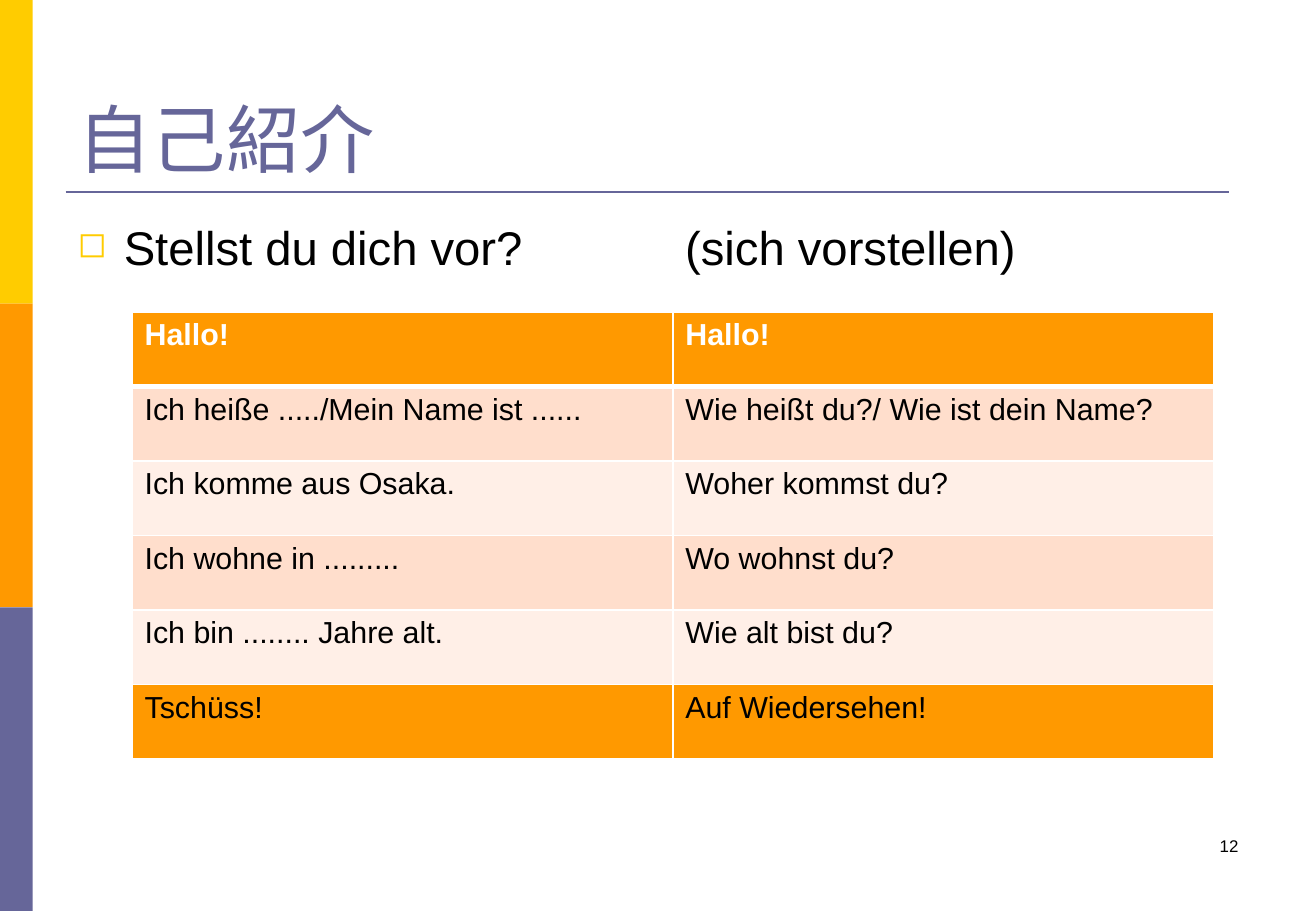
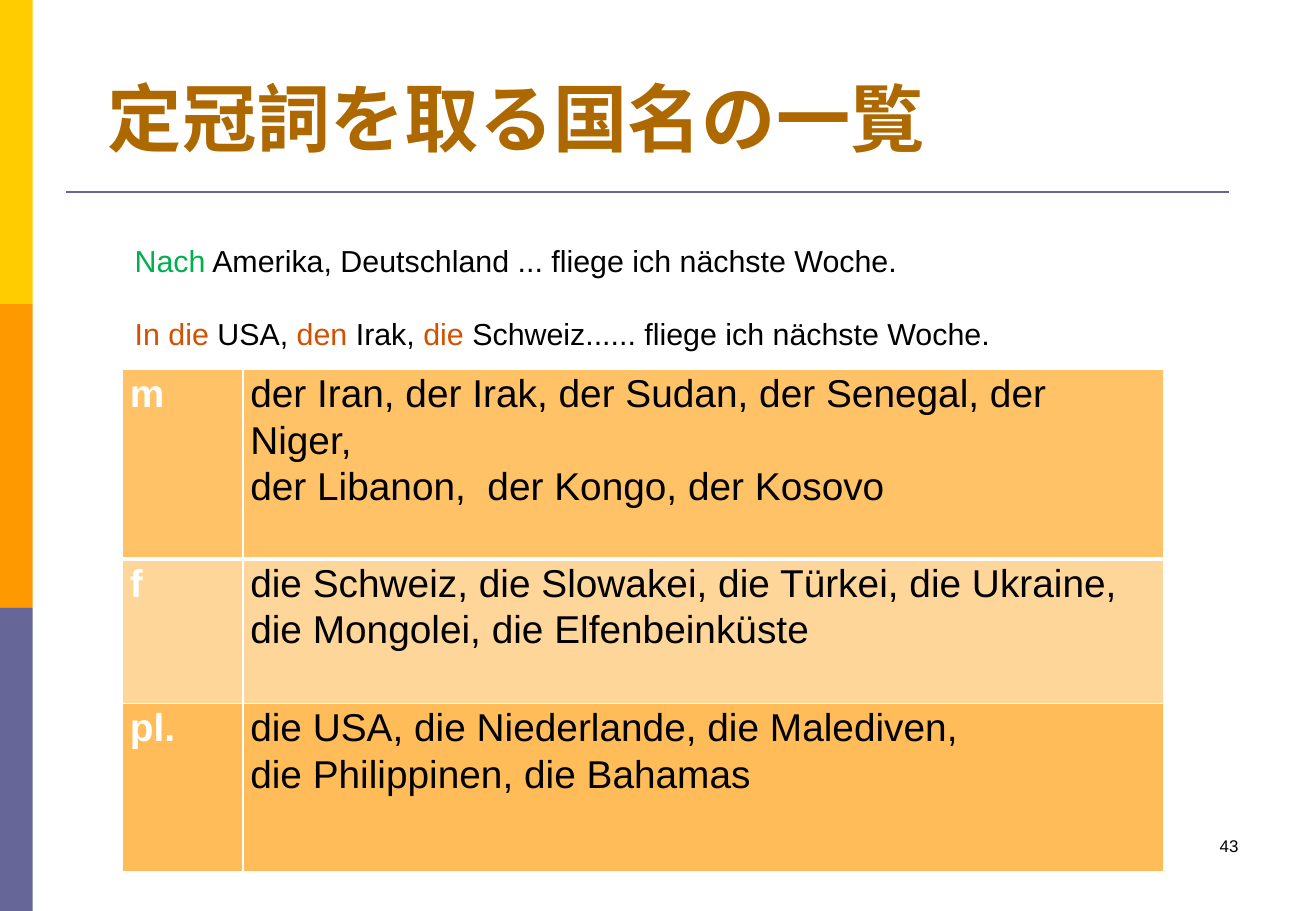
from collections import namedtuple
from dataclasses import dataclass

from lxml.etree import SubElement
from pptx import Presentation
from pptx.dml.color import RGBColor
from pptx.enum.shapes import MSO_CONNECTOR as Connector, MSO_SHAPE as Shape
from pptx.enum.text import MSO_ANCHOR as Anchor, PP_ALIGN as Align
from pptx.oxml.ns import qn
from pptx.util import Inches, Pt

Box = namedtuple("Box", "left top width height")


@dataclass(frozen=True)
class Theme:
    yellow: str = "FFCC00"
    orange: str = "FF9900"
    violet: str = "666699"
    brown: str = "AD6800"
    green: str = "00B050"
    rust: str = "D45000"
    black: str = "000000"
    white: str = "FFFFFF"
    peach: str = "FFDECC"
    pale_peach: str = "FFEFE7"
    masculine: str = "FFC266"
    feminine: str = "FFD699"
    plural: str = "FFBC58"
    font: str = "Arial"
    title_font: str = "Times New Roman"
    asian_font: str = "Noto Sans CJK JP"
    title_size: float = 44
    body_size: float = 28
    list_size: float = 23
    text_size: float = 18
    number_size: float = 10


THEME = Theme()
SLIDE = Box(0, 0, 10.83, 7.5)


def place(box):
    return [Inches(length) for length in box]


def style(run, size, color=THEME.black, bold=False, name=THEME.font):
    font = run.font
    font.size, font.bold, font.name = Pt(size), bold, name
    font.color.rgb = RGBColor.from_string(color)


def add_text(slide, box, text, size, **look):
    """Add a one-paragraph text box and return its text frame."""
    frame = slide.shapes.add_textbox(*place(box)).text_frame
    frame.word_wrap = True
    frame.text = text
    style(frame.paragraphs[0].runs[0], size, **look)
    return frame


def add_side_bands(slide, box, colors):
    height = box.height / len(colors)
    for index, color in enumerate(colors):
        part = Box(box.left, box.top + index * height, box.width, height)
        band = slide.shapes.add_shape(Shape.RECTANGLE, *place(part))
        band.shadow.inherit = False
        band.fill.solid()
        band.fill.fore_color.rgb = RGBColor.from_string(color)
        band.line.fill.background()


def add_title_rule(slide, left, right, top):
    rule = slide.shapes.add_connector(
        Connector.STRAIGHT, Inches(left), Inches(top), Inches(right), Inches(top))
    rule.line.color.rgb = RGBColor.from_string(THEME.violet)
    rule.line.width = Pt(1.5)
    SubElement(rule._element.spPr, qn("a:effectLst"))


def add_title(slide, box, text, color, bold=False):
    frame = add_text(slide, box, text, THEME.title_size, color=color,
                     bold=bold, name=THEME.title_font)
    frame.vertical_anchor = Anchor.BOTTOM
    properties = frame.paragraphs[0].runs[0].font._element
    SubElement(properties, qn("a:ea"), typeface=THEME.asian_font)


def add_number(slide, box, number):
    frame = add_text(slide, box, str(number), THEME.number_size)
    frame.paragraphs[0].alignment = Align.RIGHT


def add_base_slide(presentation, number):
    """Add a blank slide with the bands, rule and number that all slides share."""
    slide = presentation.slides.add_slide(presentation.slide_layouts[6])
    add_side_bands(slide, Box(0, 0, 0.27, SLIDE.height),
                   (THEME.yellow, THEME.orange, THEME.violet))
    add_title_rule(slide, 0.54, 10.11, 1.58)
    add_number(slide, Box(7.76, 6.83, 2.53, 0.5), number)
    return slide


def add_bullet(slide, box, text):
    paragraph = add_text(slide, box, text, THEME.body_size).paragraphs[0]
    paragraph.space_before = Pt(3)
    properties = paragraph._p.get_or_add_pPr()
    properties.set("marL", str(Inches(0.38)))
    properties.set("indent", str(Inches(-0.38)))
    color = SubElement(properties, qn("a:buClr"))
    SubElement(color, qn("a:srgbClr"), val=THEME.yellow)
    SubElement(properties, qn("a:buSzPct"), val="75000")
    SubElement(properties, qn("a:buChar"), char="◻")


def set_borders(cell, **widths):
    """Draw white cell edges; must come before the cell's fill."""
    properties = cell._tc.get_or_add_tcPr()
    for edge in "LRTB":
        line = SubElement(properties, qn(f"a:ln{edge}"), w=str(Pt(widths.get(edge, 1))))
        fill = SubElement(line, qn("a:solidFill"))
        SubElement(fill, qn("a:srgbClr"), val=THEME.white)


def add_grid(slide, box, column_widths, row_heights, rows, fills):
    """Add a table with white rules, heavy under the first row."""
    table = slide.shapes.add_table(len(rows), len(column_widths), *place(box)).table
    table.first_row = table.horz_banding = False
    for column, width in zip(table.columns, column_widths):
        column.width = Inches(width)
    heavy_edges = {0: {"B": 3}, 1: {"T": 3}}
    for index, (texts, fill) in enumerate(zip(rows, fills)):
        table.rows[index].height = Inches(row_heights[index])
        for cell, text in zip(table.rows[index].cells, texts):
            cell.text = text
            set_borders(cell, **heavy_edges.get(index, {}))
            cell.fill.solid()
            cell.fill.fore_color.rgb = RGBColor.from_string(fill)
    return table


def style_cell(cell, size, header):
    for paragraph in cell.text_frame.paragraphs:
        for run in paragraph.runs:
            style(run, size, THEME.white if header else THEME.black, header)


def add_dialogue(slide, box):
    rows = [
        ("Hallo!", "Hallo!"),
        ("Ich heiße ...../Mein Name ist ......", "Wie heißt du?/ Wie ist dein Name?"),
        ("Ich komme aus Osaka.", "Woher kommst du?"),
        ("Ich wohne in .........", "Wo wohnst du?"),
        ("Ich bin ........ Jahre alt.", "Wie alt bist du?"),
        ("Tschüss!", "Auf Wiedersehen!"),
    ]
    fills = [THEME.orange, *(THEME.peach, THEME.pale_peach) * 2, THEME.orange]
    table = add_grid(slide, box, [box.width / 2] * 2,
                     [box.height / len(rows)] * len(rows), rows, fills)
    for index, row in enumerate(table.rows):
        for cell in row.cells:
            style_cell(cell, THEME.text_size, header=index == 0)


def add_country_list(slide, box):
    rows = [
        ("m", "der Iran, der Irak, der Sudan, der Senegal, der Niger,\n"
              "der Libanon,  der Kongo, der Kosovo"),
        ("f", "die Schweiz, die Slowakei, die Türkei, die Ukraine,\n"
              "die Mongolei, die Elfenbeinküste"),
        ("pl.", "die USA, die Niederlande, die Malediven,\n"
                "die Philippinen, die Bahamas"),
    ]
    label_width = 0.99
    table = add_grid(slide, box, (label_width, box.width - label_width),
                     (1.56, 1.19, 1.39), rows,
                     (THEME.masculine, THEME.feminine, THEME.plural))
    for row in table.rows:
        for column, cell in enumerate(row.cells):
            cell.margin_left = cell.margin_right = Inches(0.06)
            cell.margin_top = cell.margin_bottom = 0
            style_cell(cell, THEME.list_size, header=column == 0)
            for paragraph in cell.text_frame.paragraphs:
                paragraph.line_spacing = 1.07


def add_examples(slide, box):
    sentences = [
        [("Nach", THEME.green),
         (" Amerika, Deutschland ... fliege ich nächste Woche.", THEME.black)],
        [("In die ", THEME.rust), ("USA,", THEME.black),
         (" den ", THEME.rust), ("Irak, ", THEME.black), ("die ", THEME.rust),
         ("Schweiz...... fliege ich nächste Woche.", THEME.black)],
    ]
    frame = slide.shapes.add_textbox(*place(box)).text_frame
    frame.word_wrap = True
    paragraphs = [frame.paragraphs[0], frame.add_paragraph()]
    for paragraph, parts in zip(paragraphs, sentences):
        paragraph.space_after = Pt(22)
        for text, color in parts:
            run = paragraph.add_run()
            run.text = text
            style(run, THEME.text_size, color)


def add_introduction_slide(presentation):
    slide = add_base_slide(presentation, 12)
    add_title(slide, Box(0.54, 0.3, 9.75, 1.25), "自己紹介", THEME.violet)
    add_bullet(slide, Box(0.54, 1.75, 9.75, 0.7),
               "Stellst du dich vor?\t\t\t(sich vorstellen)")
    add_dialogue(slide, Box(1.09, 2.57, 8.9, 3.68))


def add_countries_slide(presentation):
    slide = add_base_slide(presentation, 43)
    add_title(slide, Box(0.79, 0.49, 9.34, 0.89), "定冠詞を取る国名の一覧",
              THEME.brown, bold=True)
    add_examples(slide, Box(1.01, 1.94, 7.6, 1.05))
    add_country_list(slide, Box(1.01, 3.04, 8.57, 4.14))


def main():
    presentation = Presentation()
    presentation.slide_width = Inches(SLIDE.width)
    presentation.slide_height = Inches(SLIDE.height)
    add_introduction_slide(presentation)
    add_countries_slide(presentation)
    presentation.save("out.pptx")


if __name__ == "__main__":
    main()
